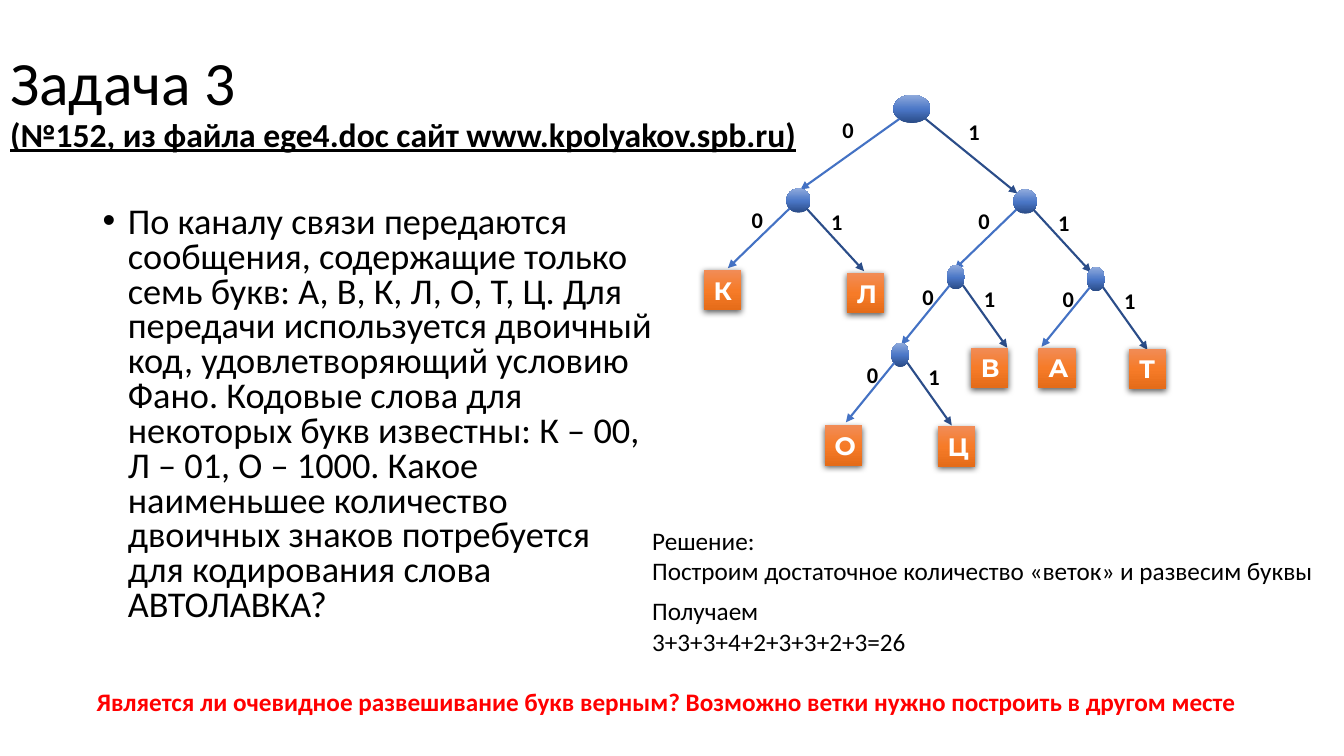
from dataclasses import dataclass

from lxml.etree import SubElement
from pptx import Presentation
from pptx.dml.color import RGBColor
from pptx.enum.shapes import MSO_CONNECTOR, MSO_SHAPE
from pptx.enum.text import MSO_ANCHOR, MSO_AUTO_SIZE, PP_ALIGN
from pptx.oxml import parse_xml
from pptx.oxml.ns import nsdecls, qn
from pptx.util import Inches, Pt


@dataclass(frozen=True)
class Theme:
    font: str = "Calibri"
    mark: str = "Montserrat"
    ink: str = "000000"
    white: str = "FFFFFF"
    alert: str = "FF0000"
    zero: str = "4472C4"
    one: str = "2B4D89"
    node: tuple = ((0, "2A4B86"), (48, "4A76C6"), (100, "8FAADC"))
    leaf: tuple = ((0, "F18C57"), (50, "F67B28"), (100, "E56C19"))
    head: float = 44
    sub: float = 24
    body: float = 25.9
    note: float = 18
    bit: float = 16
    line: float = 1.5


@dataclass(frozen=True)
class Fork:
    size: tuple
    zero: tuple
    one: tuple
    label: tuple
    gap: tuple


THEME = Theme()
ROOT = Fork((0.37, 0.28), (0.06, 0.24, -0.92, 0.94), (0.32, 0.24, 1.23, 0.98),
            (0.5, 0.44), (-0.7, 0.16, 0.55, 0.18))
WIDE = Fork((0.24, 0.24), (0.03, 0.2, -0.58, 0.79), (0.2, 0.2, 0.77, 0.82),
            (0.32, 0.37), (-0.45, 0.13, 0.34, 0.15))
SLIM = Fork((0.18, 0.24), (0.03, 0.2, -0.45, 0.79), (0.16, 0.2, 0.6, 0.82),
            (0.24, 0.37), (-0.34, 0.13, 0.27, 0.15))
FORKS = ((ROOT, 1.88, 0), (WIDE, 0.82, 0.93), (WIDE, 3.07, 0.94),
         (SLIM, 2.41, 1.69), (SLIM, 3.8, 1.71), (SLIM, 1.86, 2.46))
LEAVES = (("К", 0, 1.74), ("Л", 1.42, 1.77), ("В", 2.65, 2.51), ("А", 3.32, 2.51),
          ("Т", 4.22, 2.52), ("О", 1.2, 3.28), ("Ц", 2.32, 3.29))

TITLE = "Задача 3\v(№152, из файла ege4.doc сайт www.kpolyakov.spb.ru)"
TASK = ("По каналу связи передаются сообщения, содержащие только семь букв: "
        "А, В, К, Л, О, Т, Ц. Для передачи используется двоичный код, "
        "удовлетворяющий условию Фано. Кодовые слова для некоторых букв известны: "
        "К – 00, Л – 01, О – 1000. Какое наименьшее количество двоичных знаков "
        "потребуется \vдля кодирования слова АВТОЛАВКА?")
SOLVE = "Решение:\nПостроим достаточное количество «веток» и развесим буквы"
RESULT = "Получаем\n3+3+3+4+2+3+3+2+3=26"
DOUBT = ("Является ли очевидное развешивание букв верным? "
         "Возможно ветки нужно построить в другом месте")


def style(font, size, color=THEME.ink, bold=False, name=THEME.font):
    font.name = name
    font.size = Pt(size)
    font.bold = bold
    font.color.rgb = RGBColor.from_string(color)


def add_text(slide, box, text, size, color=THEME.ink, bold=False, wrap=True, align=PP_ALIGN.LEFT):
    frame = slide.shapes.add_textbox(*map(Inches, box)).text_frame
    frame.word_wrap = wrap
    frame.text = text
    for para in frame.paragraphs:
        para.alignment = align
        for run in para.runs:
            style(run.font, size, color, bold)
    return frame


def add_shade(slide, kind, box, stops, angle):
    shape = slide.shapes.add_shape(kind, *map(Inches, box))
    shape.shadow.inherit = False
    shape.line.fill.background()
    shape.fill.gradient()
    shape.fill.gradient_angle = 0
    grad = shape.element.spPr.find(qn("a:gradFill"))
    items = "".join(f'<a:gs pos="{pos * 1000}"><a:srgbClr val="{color}"/></a:gs>'
                    for pos, color in stops)
    grad.replace(grad.find(qn("a:gsLst")),
                 parse_xml(f'<a:gsLst {nsdecls("a")}>{items}</a:gsLst>'))
    grad.find(qn("a:lin")).set("ang", str(angle * 60000))
    return shape


def add_arrow(slide, ends, color):
    arrow = slide.shapes.add_connector(MSO_CONNECTOR.STRAIGHT, *map(Inches, ends))
    arrow.line.color.rgb = RGBColor.from_string(color)
    arrow.line.width = Pt(THEME.line)
    props = arrow.element.spPr
    SubElement(props.find(qn("a:ln")), qn("a:tailEnd"), type="triangle")
    SubElement(props, qn("a:effectLst"))


def add_leaf(slide, left, top, text):
    leaf = add_shade(slide, MSO_SHAPE.RECTANGLE, (left, top, 0.37, 0.4), THEME.leaf, 90)
    leaf.element.spPr.find(qn("a:effectLst")).append(parse_xml(
        f'<a:outerShdw {nsdecls("a")} blurRad="57150" dist="19050" dir="5400000" '
        'algn="ctr" rotWithShape="0"><a:srgbClr val="000000">'
        '<a:alpha val="63000"/></a:srgbClr></a:outerShdw>'))
    frame = leaf.text_frame
    frame.vertical_anchor = MSO_ANCHOR.TOP
    frame.text = text
    para = frame.paragraphs[0]
    para.alignment = PP_ALIGN.LEFT
    style(para.runs[0].font, THEME.note, THEME.white, True, THEME.mark)


def add_fork(slide, fork, left, top):
    add_shade(slide, MSO_SHAPE.OVAL, (left, top, *fork.size), THEME.node, 270)
    sides = (("0", fork.zero, THEME.zero, fork.gap[:2]), ("1", fork.one, THEME.one, fork.gap[2:]))
    for bit, (x1, y1, x2, y2), color, (dx, dy) in sides:
        add_arrow(slide, (left + x1, top + y1, left + x2, top + y2), color)
        add_text(slide, (left + dx, top + dy, *fork.label), bit, THEME.bit,
                 bold=True, wrap=False, align=PP_ALIGN.CENTER)


def add_tree(slide, left, top):
    for fork, dx, dy in FORKS:
        add_fork(slide, fork, left + dx, top + dy)
    for text, dx, dy in LEAVES:
        add_leaf(slide, left + dx, top + dy, text)


def add_title(slide, box):
    title = slide.shapes.title
    title.left, title.top, title.width, title.height = map(Inches, box)
    frame = title.text_frame
    frame.auto_size = MSO_AUTO_SIZE.NONE
    frame.vertical_anchor = MSO_ANCHOR.MIDDLE
    frame.text = TITLE
    para = frame.paragraphs[0]
    para.alignment = PP_ALIGN.LEFT
    para.line_spacing = 0.9
    head, sub = para.runs
    style(head.font, THEME.head)
    style(sub.font, THEME.sub, bold=True)
    sub.font.underline = True


def add_task(slide, box):
    para = add_text(slide, box, TASK, THEME.body).paragraphs[0]
    para.line_spacing = 0.8
    props = para._p.get_or_add_pPr()
    props.set("marL", str(Inches(0.25)))
    props.set("indent", str(Inches(-0.25)))
    SubElement(props, qn("a:buFont"), typeface="Arial")
    SubElement(props, qn("a:buChar"), char="•")


def add_answer(slide, left, top):
    add_text(slide, (left, top, 6.96, 0.71), SOLVE, THEME.note)
    add_text(slide, (left, top + 0.7, 6.63, 0.71), RESULT, THEME.note)


def main():
    deck = Presentation()
    deck.slide_width, deck.slide_height = Inches(13.33), Inches(7.5)
    slide = deck.slides.add_slide(deck.slide_layouts[5])
    add_title(slide, (0, 0.3, 11.5, 1.45))
    add_task(slide, (0.92, 2, 5.67, 4.76))
    add_tree(slide, 6.98, 0.94)
    add_answer(slide, 6.37, 5.16)
    add_text(slide, (0.86, 6.76, 11.61, 0.4), DOUBT, THEME.note, THEME.alert, True, False)
    deck.save("out.pptx")


if __name__ == "__main__":
    main()
